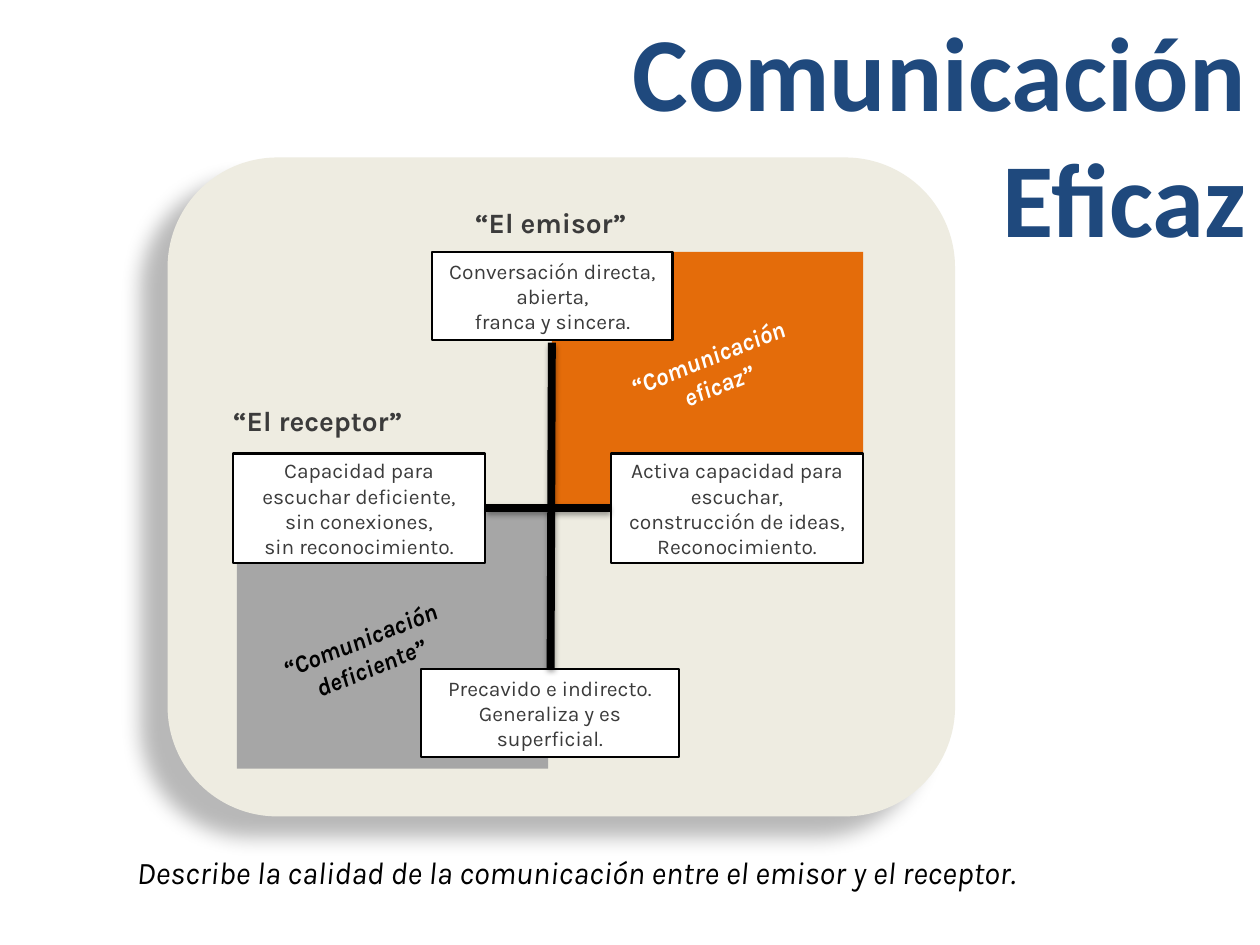
from dataclasses import dataclass

from lxml.etree import SubElement
from pptx import Presentation
from pptx.dml.color import RGBColor
from pptx.enum.shapes import MSO_CONNECTOR, MSO_SHAPE
from pptx.enum.text import MSO_ANCHOR, MSO_AUTO_SIZE, PP_ALIGN
from pptx.oxml.ns import qn
from pptx.util import Inches, Pt

COLUMNS, ROWS = 40, 30


@dataclass(frozen=True)
class Theme:
    # Colours
    panel: str = "EEECE1"
    poor: str = "A6A6A6"
    good: str = "E46C0A"
    title: str = "1F497D"
    text: str = "3B3B3B"
    black: str = "000000"
    white: str = "FFFFFF"
    # Fonts and sizes
    title_font: str = "Calibri"
    body_font: str = "Karla"
    title_size: int = 60
    caption_size: int = 18
    label_size: int = 16
    tilted_size: int = 14
    box_size: int = 12
    # Lines
    box_line: float = 1.5
    axis_line: float = 4.5


class SlideBuilder:
    """Holds the theme and the current slide; lengths are grid columns and rows."""

    def __init__(self, presentation, theme):
        self.theme = theme
        self.column = presentation.slide_width / COLUMNS
        self.row = presentation.slide_height / ROWS
        self.slide = presentation.slides.add_slide(presentation.slide_layouts[5])

    def place(self, left, top, width, height):
        return [round(value * unit) for value, unit in
                zip((left, top, width, height), (self.column, self.row) * 2)]

    def set_text(self, shape, lines, align=PP_ALIGN.CENTER, anchor=MSO_ANCHOR.TOP,
                 margins=(0, 0), **formats):
        frame = shape.text_frame
        across, down = map(Inches, margins)
        settings = {"word_wrap": True, "auto_size": MSO_AUTO_SIZE.NONE,
                    "vertical_anchor": anchor,
                    "margin_left": across, "margin_right": across,
                    "margin_top": down, "margin_bottom": down}
        for name, value in settings.items():
            setattr(frame, name, value)
        font_values = {"name": self.theme.body_font, "bold": False, "italic": False} | formats
        font_values["size"] = Pt(font_values["size"])
        color = RGBColor.from_string(font_values.pop("color"))
        frame.text = "\n".join(lines)
        for paragraph in frame.paragraphs:
            paragraph.alignment = align
            for run in paragraph.runs:
                for name, value in font_values.items():
                    setattr(run.font, name, value)
                run.font.color.rgb = color

    def cast_shadow(self, shape, opacity, blur, distance, angle):
        properties = shape._element.spPr
        effects = properties.find(qn("a:effectLst"))
        if effects is None:
            effects = SubElement(properties, qn("a:effectLst"))
        shadow = SubElement(effects, qn("a:outerShdw"), blurRad=str(Pt(blur)),
                            dist=str(Pt(distance)), dir=str(angle * 60000),
                            algn="ctr", rotWithShape="0")
        color = SubElement(shadow, qn("a:srgbClr"), val=self.theme.black)
        SubElement(color, qn("a:alpha"), val=str(opacity * 1000))

    def title(self, text, area):
        shape = self.slide.shapes.title
        names = ("left", "top", "width", "height")
        for name, value in zip(names, self.place(*area)):
            setattr(shape, name, value)
        self.set_text(shape, [text], align=PP_ALIGN.RIGHT, margins=(0.11, 0.05), bold=True,
                      name=self.theme.title_font, size=self.theme.title_size,
                      color=self.theme.title)

    def block(self, area, fill, kind=MSO_SHAPE.RECTANGLE):
        shape = self.slide.shapes.add_shape(kind, *self.place(*area))
        shape.fill.solid()
        shape.fill.fore_color.rgb = RGBColor.from_string(fill)
        shape.line.fill.background()
        shape.shadow.inherit = False
        return shape

    def panel(self, area):
        shape = self.block(area, self.theme.panel, MSO_SHAPE.ROUNDED_RECTANGLE)
        self.cast_shadow(shape, opacity=28, blur=11.8, distance=19.7, angle=141)

    def box(self, lines, area):
        shape = self.block(area, self.theme.white)
        shape.line.color.rgb = RGBColor.from_string(self.theme.black)
        shape.line.width = Pt(self.theme.box_line)
        self.set_text(shape, lines, anchor=MSO_ANCHOR.MIDDLE, margins=(0.1, 0.05),
                      size=self.theme.box_size, color=self.theme.text)

    def label(self, text, area, rotation=0, **formats):
        shape = self.slide.shapes.add_textbox(*self.place(*area))
        shape.rotation = rotation
        self.set_text(shape, [text], **formats)

    def axis(self, start, end):
        connector = self.slide.shapes.add_connector(
            MSO_CONNECTOR.STRAIGHT, *self.place(*start, *end))
        connector.line.color.rgb = RGBColor.from_string(self.theme.black)
        connector.line.width = Pt(self.theme.axis_line)
        self.cast_shadow(connector, opacity=35, blur=3.1, distance=1.8, angle=90)


def main():
    presentation = Presentation()
    presentation.slide_width, presentation.slide_height = Inches(10), Inches(7.5)
    theme = Theme()
    builder = SlideBuilder(presentation, theme)

    # Title, panel and the two coloured quadrants
    builder.title("Comunicación Eficaz", (15.76, 0, 24.24, 8.52))
    builder.panel((5.32, 5, 25, 20.92))
    quadrant = (9.88, 8.16)
    builder.block((7.52, 16.24, *quadrant), theme.poor)
    builder.block((17.52, 8, *quadrant), theme.good)

    # Boxes at the ends of the axes
    side_box = (8, 3.48)
    builder.box(["Capacidad para escuchar deficiente,", "sin conexiones,",
                 "sin reconocimiento."], (7.4, 14.4, *side_box))
    builder.box(["Activa capacidad para escuchar,", "construcción de ideas,",
                 "Reconocimiento."], (19.4, 14.4, *side_box))
    builder.box(["Conversación directa,", "abierta,", "franca y sincera."],
                (13.72, 8, 7.64, 2.8))
    builder.box(["Precavido e indirecto.", "Generaliza y es superficial."],
                (13.36, 21.24, 8.2, 2.8))

    # Axes
    builder.axis((17.52, 10.88), (17.48, 21.2))
    builder.axis((15.44, 16.12), (19.36, 16.12))

    # Axis labels
    heading = {"size": theme.label_size, "color": theme.text, "bold": True}
    builder.label("“El emisor”", (14.64, 6.52, 5.68, 1.08), **heading)
    builder.label("“El receptor”", (7.4, 12.8, 6, 1.08), align=PP_ALIGN.LEFT, **heading)

    # Tilted quadrant names
    tilted = {"rotation": 338.2, "size": theme.tilted_size, "bold": True, "italic": True}
    tilted_size = (6.08, 1.88)
    builder.label("“Comunicación\veficaz”", (19.6, 10.84, *tilted_size),
                  color=theme.white, **tilted)
    builder.label("“Comunicación\vdeficiente”", (8.56, 19.8, *tilted_size),
                  color=theme.black, **tilted)

    # Caption
    builder.label("Describe la calidad de la comunicación entre el emisor y el receptor.",
                  (0.64, 26.88, 35.32, 1.64), margins=(0.11, 0.05),
                  size=theme.caption_size, color=theme.black, italic=True)

    presentation.save("out.pptx")


if __name__ == "__main__":
    main()
